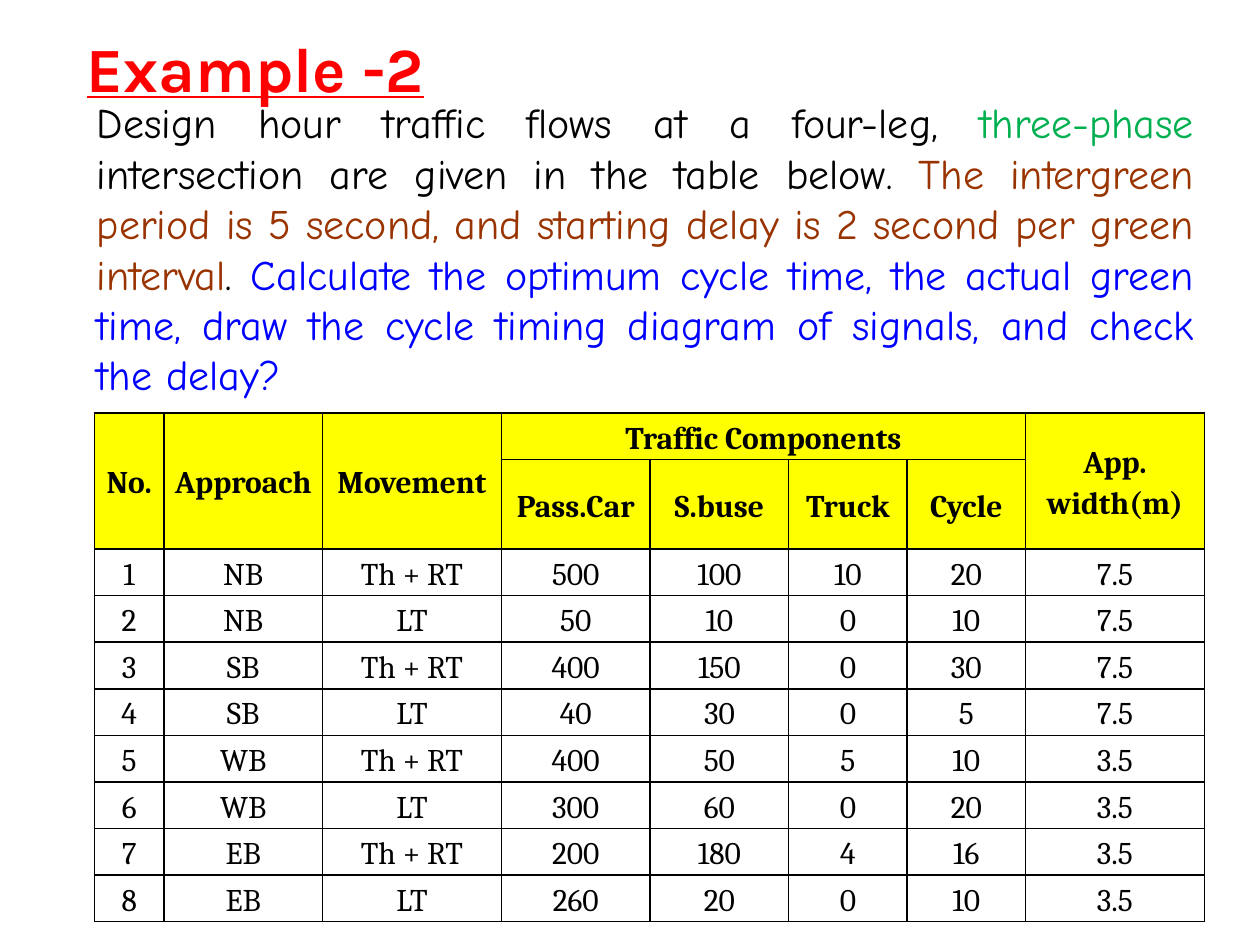
from lxml import etree
from pptx import Presentation
from pptx.dml.color import RGBColor
from pptx.enum import text
from pptx.oxml import ns
from pptx.util import Pt

COLS = [39.6, 90.72, 102.24, 84.96, 79.2, 67.68, 67.68, 102.24]
ROWS = [26.64, 51.12] + [26.64] * 8
TOP_HEADS = ["No.", "Approach", "Movement", "Traffic Components", "", "", "",
             "App. width(m)"]
SUB_HEADS = ["", "", "", "Pass.Car", "S.buse", "Truck", "Cycle", ""]
FLOWS = [
    ["1", "NB", "Th + RT", "500", "100", "10", "20", "7.5"],
    ["2", "NB", "LT", "50", "10", "0", "10", "7.5"],
    ["3", "SB", "Th + RT", "400", "150", "0", "30", "7.5"],
    ["4", "SB", "LT", "40", "30", "0", "5", "7.5"],
    ["5", "WB", "Th + RT", "400", "50", "5", "10", "3.5"],
    ["6", "WB", "LT", "300", "60", "0", "20", "3.5"],
    ["7", "EB", "Th + RT", "200", "180", "4", "16", "3.5"],
    ["8", "EB", "LT", "260", "20", "0", "10", "3.5"],
]
PROBLEM = [
    ("Design hour traffic flows at a four-leg, ", "000000"),
    ("three-phase ", "00B050"),
    ("intersection are given in the table below. ", "000000"),
    ("The intergreen period is 5 second, and starting delay is 2 second "
     "per green interval", "993300"),
    (". ", "000000"),
    ("Calculate the optimum cycle time, the actual green time, draw the cycle "
     "timing diagram of signals, and check the delay?", "0000FF"),
]


def rgb(value):
    return RGBColor.from_string(value)


def add_run(p, words, font, size, color="000000", bold=False, underline=False):
    r = p.add_run()
    r.text = words
    f = r.font
    f.name, f.size, f.bold, f.underline = font, Pt(size), bold, underline
    f.color.rgb = rgb(color)


def add_text_box(s, box, anchor=text.MSO_ANCHOR.TOP):
    tf = s.shapes.add_textbox(*map(Pt, box)).text_frame
    tf.word_wrap = True
    tf.vertical_anchor = anchor
    return tf.paragraphs[0]


def add_title(s, box):
    p = add_text_box(s, box)
    p.line_spacing = 1.5
    add_run(p, "Example -2", "Karla", 36, "FF0000", bold=True, underline=True)


def add_problem(s, box):
    p = add_text_box(s, box, text.MSO_ANCHOR.MIDDLE)
    p.alignment = text.PP_ALIGN.JUSTIFY
    for words, color in PROBLEM:
        add_run(p, words, "Comic Neue", 24, color)


def set_borders(cell, color="000000", width=1):
    """Line all four sides; the lines must precede the fill in tcPr."""
    tc_pr = cell._tc.get_or_add_tcPr()
    for i, side in enumerate(("lnL", "lnR", "lnT", "lnB")):
        ln = etree.Element(ns.qn("a:" + side), w=str(Pt(width)))
        fill = etree.SubElement(ln, ns.qn("a:solidFill"))
        etree.SubElement(fill, ns.qn("a:srgbClr"), val=color)
        tc_pr.insert(i, ln)


def fill_cell(cell, words, header):
    cell.margin_left = cell.margin_right = Pt(5)
    cell.margin_top = cell.margin_bottom = 0
    cell.vertical_anchor = text.MSO_ANCHOR.MIDDLE
    if header:
        cell.fill.solid()
        cell.fill.fore_color.rgb = rgb("FFFF00")
    else:
        cell.fill.background()
    set_borders(cell)
    p = cell.text_frame.paragraphs[0]
    p.alignment = text.PP_ALIGN.CENTER
    p.line_spacing = 1.15
    p.font.size = Pt(18)
    if words:
        add_run(p, words, "Cambria", 18, bold=header)


def add_flow_table(s, left, top):
    rows = [TOP_HEADS, SUB_HEADS] + FLOWS
    table = s.shapes.add_table(len(ROWS), len(COLS), Pt(left), Pt(top),
                               Pt(sum(COLS)), Pt(sum(ROWS))).table
    table.first_row = table.horz_banding = False
    for col, width in zip(table.columns, COLS):
        col.width = Pt(width)
    for row, height, values, i in zip(table.rows, ROWS, rows, range(len(rows))):
        row.height = Pt(height)
        for cell, words in zip(row.cells, values):
            fill_cell(cell, words, header=i < 2)
    for c in (0, 1, 2, 7):
        table.cell(0, c).merge(table.cell(1, c))
    table.cell(0, 3).merge(table.cell(0, 6))


def main():
    prs = Presentation()
    prs.slide_width, prs.slide_height = Pt(720), Pt(540)
    s = prs.slides.add_slide(prs.slide_layouts[6])
    add_title(s, (42.5, -8, 385, 67))
    add_problem(s, (48.25, 51, 641, 181.5))
    add_flow_table(s, 54, 236)
    prs.save("out.pptx")


if __name__ == "__main__":
    main()
